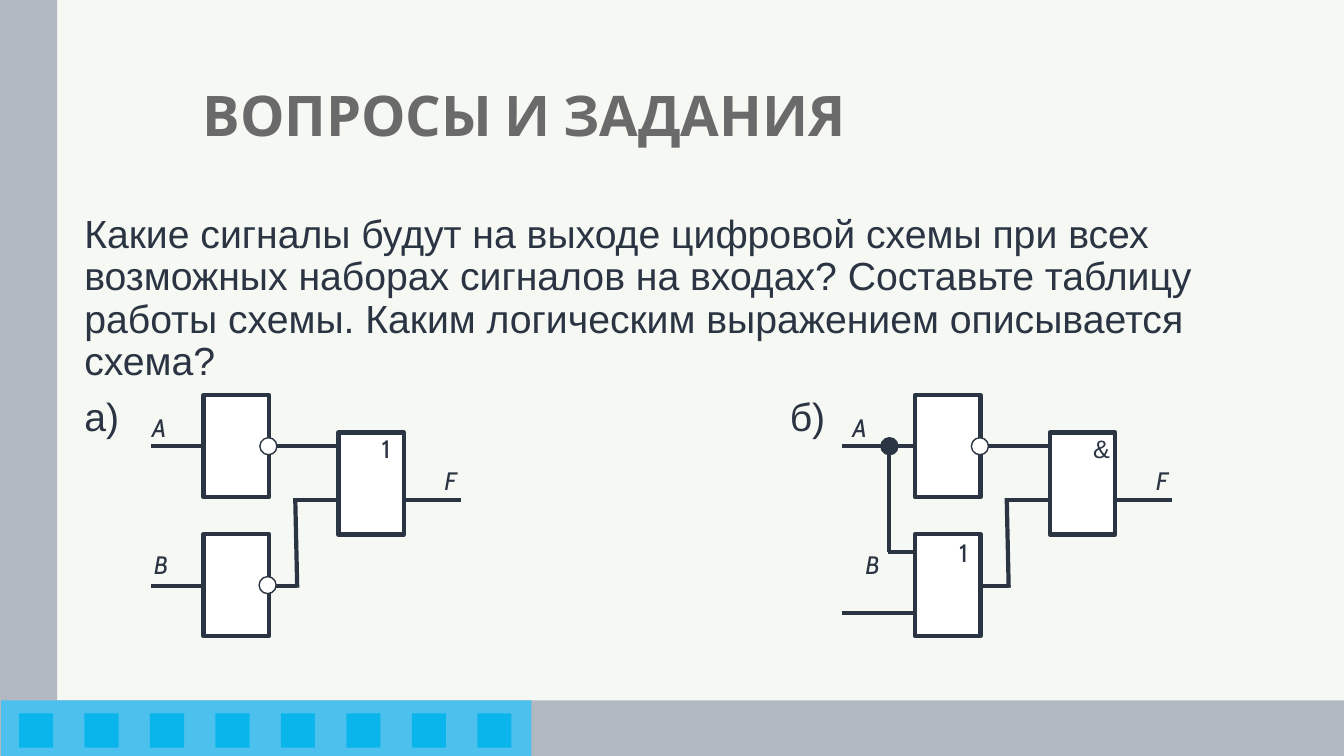
from lxml import etree
from pptx import Presentation
from pptx.dml.color import RGBColor
from pptx.enum.shapes import MSO_CONNECTOR, MSO_SHAPE
from pptx.enum.text import MSO_ANCHOR, MSO_AUTO_SIZE, PP_ALIGN
from pptx.oxml.ns import qn
from pptx.util import Cm, Pt

RECT, OVAL = MSO_SHAPE.RECTANGLE, MSO_SHAPE.OVAL
STRAIGHT = MSO_CONNECTOR.STRAIGHT
LEFT, MIDDLE, TOP = PP_ALIGN.LEFT, MSO_ANCHOR.MIDDLE, MSO_ANCHOR.TOP
NO_FIT = MSO_AUTO_SIZE.NONE

PAPER = RGBColor(0xF6, 0xF8, 0xF3)
GREY = RGBColor(0xB2, 0xB8, 0xC2)
SKY = RGBColor(0x4D, 0xC1, 0xED)
BLUE = RGBColor(0x0A, 0xB5, 0xEC)
INK = RGBColor(0x2A, 0x34, 0x42)
TITLE_GREY = RGBColor(0x6A, 0x6A, 0x6A)
WHITE = RGBColor(0xFF, 0xFF, 0xFF)

SLIDE_W, SLIDE_H = 33.87, 19.05
BAR = 1.44
GATE_W, GATE_H = 1.65, 2.57
BUBBLE = 0.43

QUESTION = ("Какие сигналы будут на выходе цифровой схемы при всех возможных "
            "наборах сигналов на входах? Составьте таблицу работы схемы. "
            "Каким логическим выражением описывается схема?")

# Positions in cm from the top left corner of the upper gate
GATES = [(0, 0), (0, 3.5), (3.4, 0.94)]
COMMON_WIRES = [(2.29, 2.64, 6.48, 2.64), (2.36, 4.85, 2.31, 2.59)]
COMMON_LABELS = [("B", -1.5, 3.76), ("F", 5.82, 1.65)]
CIRCUIT_A = dict(
    wires=[(-1.32, 1.27, 3.4, 1.27), (-1.32, 4.8, 2.36, 4.8)],
    bubbles=[(1.42, 1.07, WHITE), (1.4, 4.57, WHITE)],
    labels=[("A", -1.55, 0.3)],
    signs=[("1", 4.24, 0.84, "Cabin")])
CIRCUIT_B = dict(
    wires=[(-1.85, 1.27, 3.4, 1.27), (1.42, 4.8, 2.36, 4.8),
           (-0.66, 1.24, -0.66, 3.94), (-0.69, 3.94, 0, 3.94),
           (-1.85, 5.49, 0, 5.49)],
    bubbles=[(1.42, 1.07, WHITE), (-0.86, 1.07, INK)],
    labels=[("A", -1.83, 0.3)],
    signs=[("&", 4.24, 0.84, "Arial"), ("1", 0.86, 3.45, "Cabin")])


def add_box(s, kind, x, y, w, h, fill, line_pt=0):
    sp = s.shapes.add_shape(kind, Cm(x), Cm(y), Cm(w), Cm(h))
    sp.shadow.inherit = False
    sp.fill.solid()
    sp.fill.fore_color.rgb = fill
    if line_pt:
        sp.line.color.rgb = INK
        sp.line.width = Pt(line_pt)
    else:
        sp.line.fill.background()


def add_wire(s, x1, y1, x2, y2):
    wire = s.shapes.add_connector(STRAIGHT, Cm(x1), Cm(y1), Cm(x2), Cm(y2))
    wire.line.color.rgb = INK
    wire.line.width = Pt(3)
    etree.SubElement(wire._element.spPr, qn("a:effectLst"))


def add_run(p, text, size, font, color, bold=False, italic=False):
    r = p.add_run()
    r.text = text
    r.font.size, r.font.name = Pt(size), font
    r.font.color.rgb = color
    r.font.bold, r.font.italic = bold, italic


def add_label(s, text, x, y, font="Cabin", italic=False):
    tf = s.shapes.add_textbox(Cm(x), Cm(y), Cm(0.76), Cm(1.02)).text_frame
    tf.word_wrap = True
    add_run(tf.paragraphs[0], text, 18, font, INK, italic=italic)


def place(sp, x, y, w, h, anchor):
    """Move a placeholder and return its text frame."""
    sp.left, sp.top, sp.width, sp.height = Cm(x), Cm(y), Cm(w), Cm(h)
    tf = sp.text_frame
    tf.auto_size, tf.vertical_anchor, tf.word_wrap = NO_FIT, anchor, True
    return tf


def add_frame(s):
    """Grey side and bottom bars with the row of blue squares."""
    s.background.fill.solid()
    s.background.fill.fore_color.rgb = PAPER
    top = SLIDE_H - 1.4
    add_box(s, RECT, 0, 0, BAR, SLIDE_H, GREY)
    add_box(s, RECT, 0, top, SLIDE_W, 1.4, GREY)
    add_box(s, RECT, 0.03, top, 13.36, 1.4, SKY)
    for i in range(8):
        add_box(s, RECT, 0.48 + 1.65 * i, top + 0.33, 0.86, 0.86, BLUE)


def fill_title(s, x, y, w, h):
    p = place(s.shapes.title, x, y, w, h, MIDDLE).paragraphs[0]
    p.alignment, p.line_spacing = LEFT, 0.9
    add_run(p, "ВОПРОСЫ И ЗАДАНИЯ", 40, "Cabin", TITLE_GREY, bold=True)


def fill_question(s, x, y, w, h):
    """Question text, then the two circuit letters one wide tab apart."""
    tf = place(s.placeholders[1], x, y, w, h, TOP)
    for i, text in enumerate((QUESTION, "а)\tб)")):
        p = tf.add_paragraph() if i else tf.paragraphs[0]
        p.alignment, p.line_spacing, p.space_before = LEFT, 0.9, Pt(10)
        pPr = p._p.get_or_add_pPr()
        pPr.set("marL", "0")
        pPr.set("indent", "0")
        pPr.set("defTabSz", str(Cm(17.78)))
        etree.SubElement(pPr, qn("a:buNone"))
        add_run(p, text, 28, "Arial", INK)


def add_circuit(s, x, y, wires, bubbles, labels, signs):
    for x1, y1, x2, y2 in COMMON_WIRES + wires:
        add_wire(s, x + x1, y + y1, x + x2, y + y2)
    for dx, dy in GATES:
        add_box(s, RECT, x + dx, y + dy, GATE_W, GATE_H, WHITE, 3)
    for dx, dy, fill in bubbles:
        add_box(s, OVAL, x + dx, y + dy, BUBBLE, BUBBLE, fill, 1)
    for text, dx, dy in COMMON_LABELS + labels:
        add_label(s, text, x + dx, y + dy, italic=True)
    for text, dx, dy, font in signs:
        add_label(s, text, x + dx, y + dy, font)


def main():
    prs = Presentation()
    prs.slide_width, prs.slide_height = Cm(SLIDE_W), Cm(SLIDE_H)
    s = prs.slides.add_slide(prs.slide_layouts[1])
    add_frame(s)
    fill_title(s, 4.85, 1.14, 27.18, 3.68)
    fill_question(s, 1.87, 5.28, 30.18, 6.35)
    add_circuit(s, 5.13, 9.96, **CIRCUIT_A)
    add_circuit(s, 23.06, 9.96, **CIRCUIT_B)
    prs.save("out.pptx")


if __name__ == "__main__":
    main()
